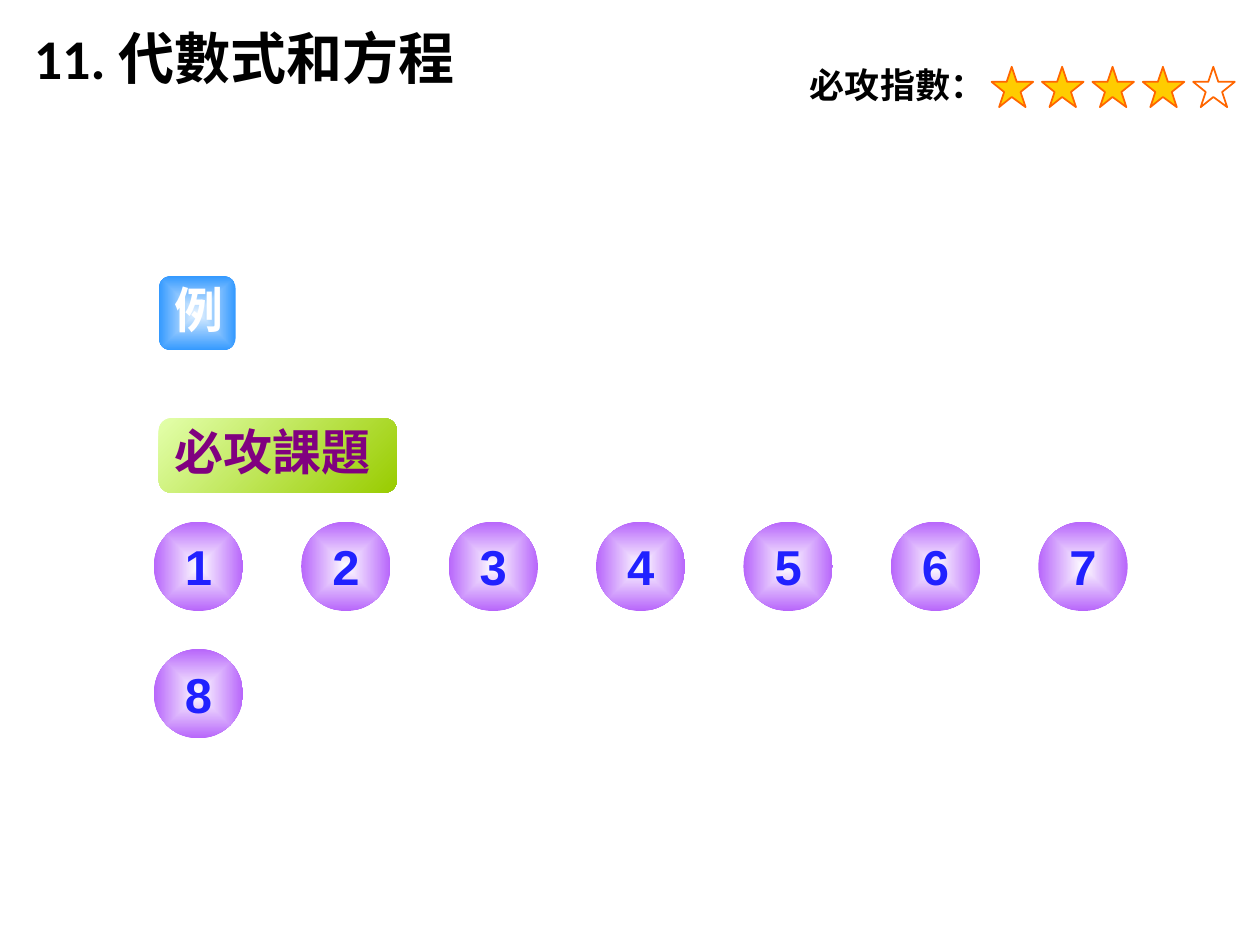
from lxml import etree
from pptx import Presentation
from pptx.dml.color import RGBColor
from pptx.enum.shapes import MSO_SHAPE
from pptx.enum.text import MSO_ANCHOR, PP_ALIGN
from pptx.oxml import parse_xml
from pptx.oxml.ns import qn
from pptx.util import Inches, Pt

ROUNDED, OVAL = MSO_SHAPE.ROUNDED_RECTANGLE, MSO_SHAPE.OVAL
LEFT, CENTER = PP_ALIGN.LEFT, PP_ALIGN.CENTER
TOP, MIDDLE = MSO_ANCHOR.TOP, MSO_ANCHOR.MIDDLE

BLACK = RGBColor(0x00, 0x00, 0x00)
WHITE = RGBColor(0xFF, 0xFF, 0xFF)
GOLD = RGBColor(0xFF, 0xCC, 0x00)
ORANGE = RGBColor(0xFF, 0x66, 0x00)
PALE_LIME = RGBColor(0xE3, 0xFF, 0xAB)
LIME = RGBColor(0x99, 0xCC, 0x00)
PALE_BLUE = RGBColor(0xE5, 0xF2, 0xFF)
BLUE = RGBColor(0x33, 0x99, 0xFF)
VIOLET = RGBColor(0xB7, 0x65, 0xFB)
PURPLE = RGBColor(0x80, 0x00, 0x80)
INK_BLUE = RGBColor(0x21, 0x21, 0xFF)

CJK_FONT = "Noto Sans CJK SC"
STAR = [(0, 0.12), (0.12, 0.12), (0.16, 0), (0.2, 0.12), (0.33, 0.12),
        (0.23, 0.2), (0.27, 0.32), (0.16, 0.24), (0.06, 0.32), (0.1, 0.2)]
STAR_LEFT, STAR_TOP, STAR_STEP = 7.87, 0.53, 0.4
RATING, STAR_COUNT = 4, 5
GRID_LEFT, GRID_TOP, COL_STEP, ROW_STEP = 1.22, 4.14, 1.17, 1.01
TOPICS, COLUMNS, BUTTON = 8, 7, 0.71
RADIAL = ('<a:path xmlns:a="http://schemas.openxmlformats.org/drawingml/2006/main" '
          'path="shape"><a:fillToRect l="50000" t="50000" r="50000" b="50000"/></a:path>')


def write(sp, text, size, font, color, align=LEFT, anchor=TOP, spacing=None, wrap=True):
    tf = sp.text_frame
    tf.word_wrap = wrap
    tf.vertical_anchor = anchor
    p = tf.paragraphs[0]
    p.alignment = align
    if spacing:
        p.line_spacing = Pt(spacing)
    r = p.add_run()
    r.text = text
    r.font.size = Pt(size)
    r.font.bold = True
    r.font.name = font
    r.font.color.rgb = color
    ea = etree.Element(qn("a:ea"), typeface=CJK_FONT)
    r.font._element.find(qn("a:latin")).addnext(ea)


def add_label(s, box, *args, **kwargs):
    write(s.shapes.add_textbox(*map(Inches, box)), *args, **kwargs)


def add_star(s, index, color):
    left = STAR_LEFT + index * STAR_STEP
    points = [(Inches(left + x), Inches(STAR_TOP + y)) for x, y in STAR]
    fb = s.shapes.build_freeform(*points[0])
    fb.add_line_segments(points[1:], close=True)
    sp = fb.convert_to_shape()
    sp.shadow.inherit = False
    sp.fill.solid()
    sp.fill.fore_color.rgb = color
    sp.line.color.rgb = ORANGE
    sp.line.width = Pt(1)


def add_button(s, kind, box, start, end, radial=True):
    sp = s.shapes.add_shape(kind, *map(Inches, box))
    sp.shadow.inherit = False
    sp.line.fill.background()
    sp.fill.gradient()
    for stop, color in zip(sp.fill.gradient_stops, (start, end)):
        stop.color.rgb = color
    if radial:
        lin = sp._element.spPr.find(".//" + qn("a:lin"))
        lin.getparent().replace(lin, parse_xml(RADIAL))
    else:
        sp.fill.gradient_angle = 315
    return sp


def add_topic(s, index):
    row, col = divmod(index, COLUMNS)
    box = (GRID_LEFT + col * COL_STEP, GRID_TOP + row * ROW_STEP, BUTTON, BUTTON)
    sp = add_button(s, OVAL, box, WHITE, VIOLET)
    write(sp, str(index + 1), 28, "Arial", INK_BLUE, CENTER, MIDDLE, wrap=False)


def main():
    prs = Presentation()
    prs.slide_width, prs.slide_height = Inches(10), Inches(7.5)
    s = prs.slides.add_slide(prs.slide_layouts[6])
    add_label(s, (0.17, 0.14, 6.56, 0.82), "11. 代數式和方程", 32, "Calibri", BLACK)
    add_label(s, (6.33, 0.49, 1.99, 0.47), "必攻指數：", 20, "Arial", BLACK, spacing=21.6)
    for i in range(STAR_COUNT):
        add_star(s, i, GOLD if i < RATING else WHITE)
    sp = add_button(s, ROUNDED, (1.26, 3.32, 1.89, 0.59), PALE_LIME, LIME, radial=False)
    write(sp, "必攻課題", 28, CJK_FONT, PURPLE, spacing=30)
    sp = add_button(s, ROUNDED, (1.26, 2.19, 0.61, 0.59), PALE_BLUE, BLUE)
    write(sp, "例", 28, CJK_FONT, WHITE, CENTER, spacing=30)
    for i in range(TOPICS):
        add_topic(s, i)
    prs.save("out.pptx")


if __name__ == "__main__":
    main()
